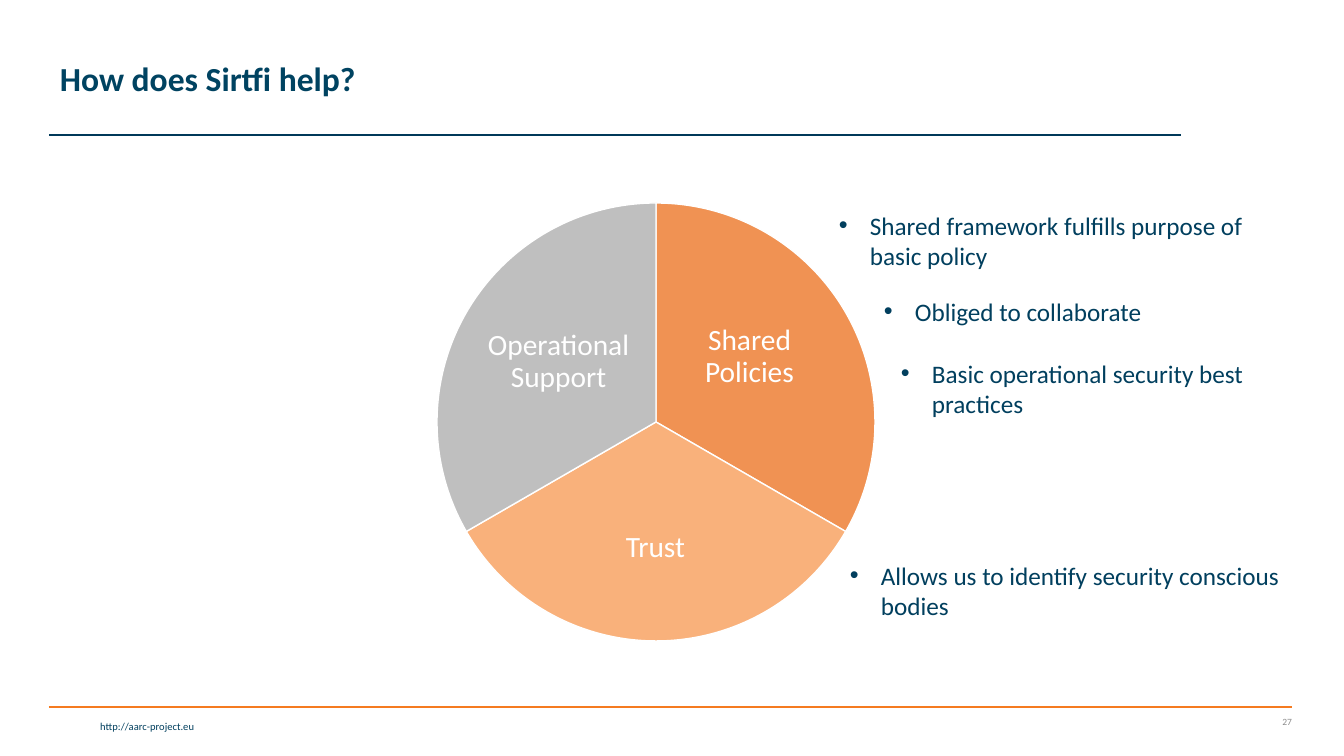
from lxml.etree import SubElement
from pptx import Presentation
from pptx.dml.color import RGBColor
from pptx.enum.shapes import MSO_CONNECTOR, MSO_SHAPE
from pptx.enum.text import MSO_ANCHOR, PP_ALIGN
from pptx.oxml.ns import qn
from pptx.util import Pt

TITLE = "How does Sirtfi help?"
LINK = "http://aarc-project.eu"
PAGE = "27"
SLICES = [
    ("Shared Policies", "shared", 83, (675, 284, 149, 146)),
    ("Trust", "trust", 58, (556, 480, 199, 136)),
    ("Operational Support", "support", 100, (484, 289, 149, 146)),
]
POINTS = [
    ("Shared framework fulfills purpose of basic policy", (829, 205, 453, 72)),
    ("Obliged to collaborate", (874, 291, 453, 40)),
    ("Basic operational security best practices", (891, 353, 453, 72)),
    ("Allows us to identify security conscious bodies", (840, 555, 464, 72)),
]
RULES = [((49, 707), (1292, 707), "orange"), ((1181, 135), (49, 135), "navy")]
PIE = (437, 203, 438, 438)
START, TURN = 270, 120

THEME = {
    "font": "Calibri",
    "color": {
        "title": "004361", "body": "013F5E", "link": "003F5E", "page": "8C8C8C",
        "white": "FFFFFF", "orange": "F57B20", "navy": "003959",
        "shared": "ED7D31", "trust": "F6791C", "support": "BFBFBF",
    },
    "size": {"title": 24, "label": 21, "body": 18, "link": 7.5, "page": 6.8},
}
WIDTH, HEIGHT = 1344, 756
SCALE = 12192000 / WIDTH


def px(n):
    return round(n * SCALE)


def tint(name):
    return RGBColor.from_string(THEME["color"][name])


def add_text(slide, text, rect, size, color, bold=False, align=PP_ALIGN.LEFT,
             anchor=MSO_ANCHOR.TOP, inset=None, space=None, bullet=None):
    frame = slide.shapes.add_textbox(*map(px, rect)).text_frame
    frame.word_wrap = True
    frame.vertical_anchor = anchor
    if inset is not None:
        frame.margin_left = frame.margin_right = px(inset)
        frame.margin_top = frame.margin_bottom = px(inset)
    para = frame.paragraphs[0]
    para.alignment = align
    if space:
        para.line_spacing = space
    if bullet:
        props = para._p.get_or_add_pPr()
        props.set("marL", str(px(bullet)))
        props.set("indent", str(-px(bullet)))
        SubElement(props, qn("a:buFont"), typeface="Arial")
        SubElement(props, qn("a:buChar"), char="•")
    run = para.add_run()
    run.text = text
    run.font.name = THEME["font"]
    run.font.size = Pt(THEME["size"][size])
    run.font.bold = bold
    run.font.color.rgb = tint(color)


def add_rule(slide, start, end, color):
    rule = slide.shapes.add_connector(MSO_CONNECTOR.STRAIGHT, *map(px, start + end))
    rule.line.color.rgb = tint(color)
    rule.line.width = Pt(1)
    SubElement(rule._element.spPr, qn("a:effectLst"))


def add_slice(slide, index, color, alpha):
    wedge = slide.shapes.add_shape(MSO_SHAPE.PIE, *map(px, PIE))
    wedge.shadow.inherit = False
    for side in range(2):
        angle = (START + TURN * (index + side)) % 360
        wedge.adjustments[side] = angle * 0.6
    wedge.fill.solid()
    wedge.fill.fore_color.rgb = tint(color)
    if alpha < 100:
        shade = wedge._element.spPr.find(qn("a:solidFill"))[0]
        SubElement(shade, qn("a:alpha"), val=str(alpha * 1000))
    wedge.line.color.rgb = tint("white")
    wedge.line.width = Pt(1)


def main():
    deck = Presentation()
    deck.slide_width, deck.slide_height = px(WIDTH), px(HEIGHT)
    slide = deck.slides.add_slide(deck.slide_layouts[6])
    for rule in RULES:
        add_rule(slide, *rule)
    add_text(slide, LINK, (3, 715, 201, 23), "link", "link", align=PP_ALIGN.RIGHT)
    add_text(slide, PAGE, (1220, 707, 82, 30), "page", "page",
             align=PP_ALIGN.RIGHT, anchor=MSO_ANCHOR.MIDDLE)
    add_text(slide, TITLE, (50, 8, 1059, 146), "title", "title", bold=True,
             anchor=MSO_ANCHOR.MIDDLE, space=0.9)
    for index, (label, color, alpha, rect) in enumerate(SLICES):
        add_slice(slide, index, color, alpha)
        add_text(slide, label, rect, "label", "white", align=PP_ALIGN.CENTER,
                 anchor=MSO_ANCHOR.MIDDLE, inset=3, space=0.9)
    for text, rect in POINTS:
        add_text(slide, text, rect, "body", "body", bullet=31)
    deck.save("out.pptx")


if __name__ == "__main__":
    main()
